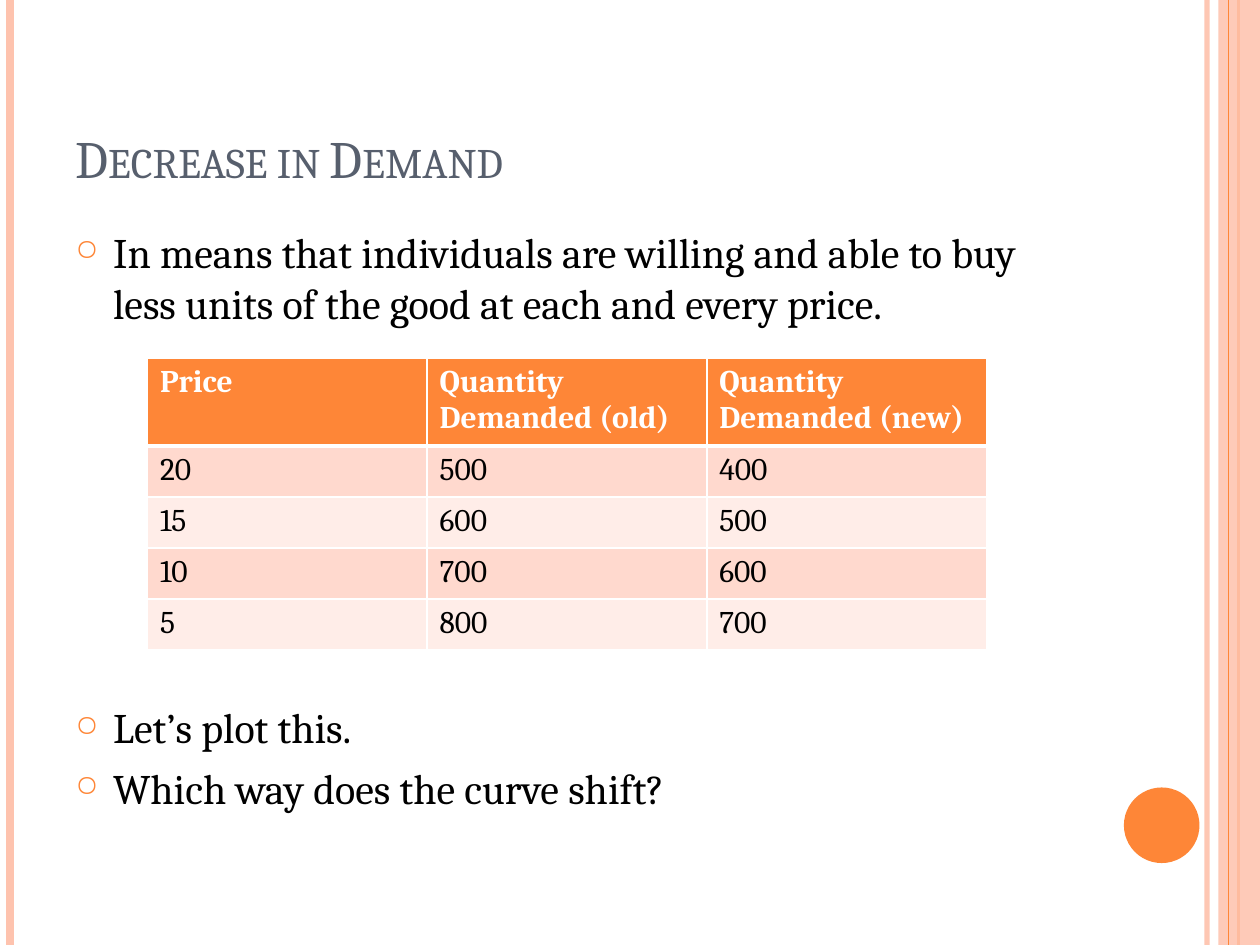
"""Build the "Decrease in Demand" slide with its demand table."""
import pptx
import pptx.dml.color
import pptx.enum.shapes
import pptx.enum.text
import pptx.oxml
import pptx.oxml.ns
import pptx.util
from pptx.util import Inches

FONT = "Cambria"
ORANGE, PEACH, SLATE, BLACK, WHITE = "FE8637", "FEC3AE", "575F6D", "000000", "FFFFFF"
BANDS = ["FFD9CE", "FFEDE8"]
TITLE = "Decrease in Demand"
BULLETS = [
    ("In means that individuals are willing and able to buy less units "
     "of the good at each and every price.", 6),
    ("Let’s plot this.", 214),
    ("Which way does the curve shift?", 6),
]
ROWS = [
    ("Price", "Quantity Demanded (old)", "Quantity Demanded (new)"),
    ("20", "500", "400"),
    ("15", "600", "500"),
    ("10", "700", "600"),
    ("5", "800", "700"),
]
LEFT_RULES = [(9.58, PEACH, 3, 93), (0.08, PEACH, 4.5, 100), (9.83, ORANGE, 1.5, 100)]
TOP_RULES = [(9.75, ORANGE, 0.75, 100)]


def color(value):
    return pptx.dml.color.RGBColor.from_string(value)


def add_xml(parent, tag, content="", **attributes):
    text = "".join(f' {name}="{value}"' for name, value in attributes.items())
    namespace = pptx.oxml.ns.nsdecls("a")
    element = pptx.oxml.parse_xml(f"<a:{tag} {namespace}{text}>{content}</a:{tag}>")
    parent.append(element)


def solid(value):
    return f'<a:solidFill><a:srgbClr val="{value}"/></a:solidFill>'


def set_opacity(shape, percent):
    if percent < 100:
        target = shape._element.spPr.find(".//" + pptx.oxml.ns.qn("a:srgbClr"))
        add_xml(target, "alpha", val=percent * 1000)


def set_font(paragraph, size, value, bold=False):
    font = paragraph.font
    font.name, font.size, font.bold = FONT, pptx.util.Pt(size), bold
    font.color.rgb = color(value)


def add_rules(slide, rules):
    for x, value, width, opacity in rules:
        rule = slide.shapes.add_connector(
            pptx.enum.shapes.MSO_CONNECTOR.STRAIGHT,
            Inches(x), 0, Inches(x), Inches(7.5))
        rule.line.color.rgb = color(value)
        rule.line.width = pptx.util.Pt(width)
        set_opacity(rule, opacity)
        add_xml(rule._element.spPr, "effectLst")


def add_solid(slide, kind, box, value, opacity=100):
    shape = slide.shapes.add_shape(kind, *map(Inches, box))
    shape.shadow.inherit = False
    shape.fill.solid()
    shape.fill.fore_color.rgb = color(value)
    shape.line.fill.background()
    set_opacity(shape, opacity)


def add_text_frame(slide, box):
    frame = slide.shapes.add_textbox(*map(Inches, box)).text_frame
    frame.word_wrap = True
    return frame


def add_title(slide):
    frame = add_text_frame(slide, (0.5, 0.3, 8.17, 1.25))
    frame.vertical_anchor = pptx.enum.text.MSO_ANCHOR.BOTTOM
    paragraph = frame.paragraphs[0]
    run = paragraph.add_run()
    run.text = TITLE
    run._r.get_or_add_rPr().set("cap", "small")
    set_font(paragraph, 30, SLATE)


def add_bullets(slide):
    frame = add_text_frame(slide, (0.5, 1.75, 8.17, 5.33))
    for index, (text, space) in enumerate(BULLETS):
        paragraph = frame.add_paragraph() if index else frame.paragraphs[0]
        paragraph.text = text
        properties = paragraph._p.get_or_add_pPr()
        properties.set("marL", str(Inches(0.3)))
        properties.set("indent", str(Inches(-0.3)))
        add_xml(properties, "buClr", f'<a:srgbClr val="{ORANGE}"/>')
        add_xml(properties, "buSzPct", val=70000)
        add_xml(properties, "buChar", char="○")
        paragraph.space_before = pptx.util.Pt(space)
        set_font(paragraph, 24, BLACK)


def add_demand_table(slide):
    table = slide.shapes.add_table(
        len(ROWS), len(ROWS[0]),
        *map(Inches, (1.17, 2.84, 6.66, 2.29))).table
    for column in table.columns:
        column.width = Inches(2.22)
    for index, values in enumerate(ROWS):
        header = index == 0
        table.rows[index].height = Inches(0.67 if header else 0.405)
        for cell, text in zip(table.rows[index].cells, values):
            cell.text = text
            set_font(cell.text_frame.paragraphs[0], 18, WHITE if header else BLACK, header)
            properties = cell._tc.get_or_add_tcPr()
            for side in "LRTB":
                thick = (header and side == "B") or (index == 1 and side == "T")
                add_xml(properties, f"ln{side}", solid(WHITE),
                        w=pptx.util.Pt(3 if thick else 1))
            cell.fill.solid()
            cell.fill.fore_color.rgb = color(ORANGE if header else BANDS[(index - 1) % 2])


def main():
    presentation = pptx.Presentation()
    presentation.slide_width, presentation.slide_height = Inches(10), Inches(7.5)
    slide = presentation.slides.add_slide(presentation.slide_layouts[6])
    shapes = pptx.enum.shapes.MSO_SHAPE
    add_rules(slide, LEFT_RULES)
    add_solid(slide, shapes.RECTANGLE, (9.67, 0, 0.33, 7.5), PEACH, 87)
    add_rules(slide, TOP_RULES)
    add_solid(slide, shapes.OVAL, (8.92, 6.25, 0.6, 0.6), ORANGE)
    add_title(slide)
    add_bullets(slide)
    add_demand_table(slide)
    presentation.save("out.pptx")


if __name__ == "__main__":
    main()
